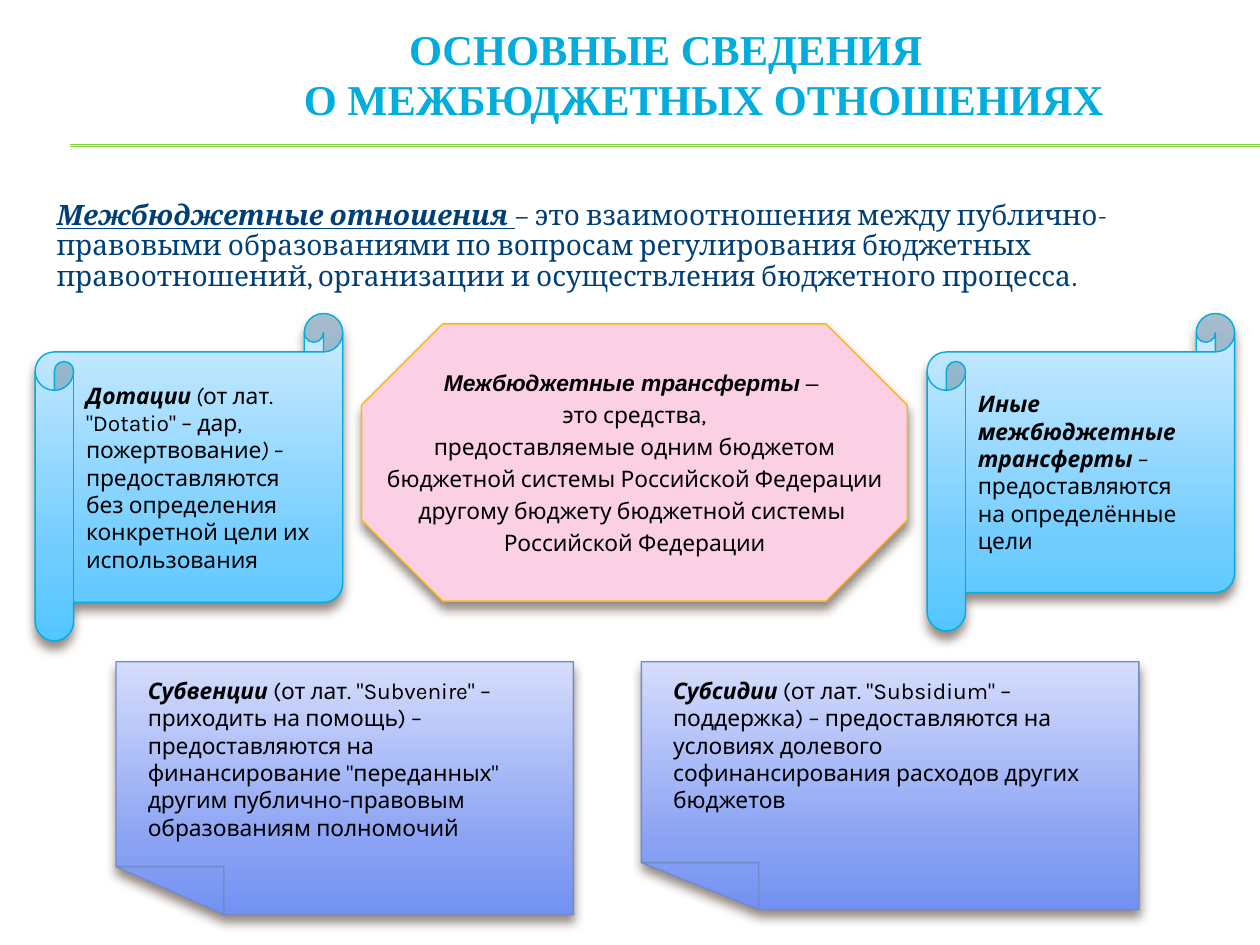
import copy
from dataclasses import dataclass

import pptx
import pptx.dml.color
import pptx.enum.shapes
import pptx.enum.text
import pptx.oxml
import pptx.oxml.ns
import pptx.util

Cm = pptx.util.Cm
Pt = pptx.util.Pt
qn = pptx.oxml.ns.qn
MSO_SHAPE = pptx.enum.shapes.MSO_SHAPE
ANCHOR = pptx.enum.text.MSO_ANCHOR
ALIGN = pptx.enum.text.PP_ALIGN

SKY = ("D1ECFF", "72CDFF", "52C6FF")
VIOLET = ("D5DDFC", "8AA2F3", "7292F3")


@dataclass(frozen=True)
class Piece:
    text: str
    style: str = ""


@dataclass(frozen=True)
class Box:
    left: float
    top: float
    width: float
    height: float

    def lengths(self) -> tuple:
        return Cm(self.left), Cm(self.top), Cm(self.width), Cm(self.height)


@dataclass(frozen=True)
class Card:
    box: Box
    pieces: tuple


def color(value: str) -> pptx.dml.color.RGBColor:
    return pptx.dml.color.RGBColor.from_string(value)


def write(paragraph, pieces: tuple, font: str, size: float, ink: str) -> None:
    paragraph.font.name = font
    paragraph.font.size = Pt(size)
    paragraph.font.color.rgb = color(ink)
    for piece in pieces:
        run = paragraph.add_run()
        run.text = piece.text
        run.font.bold = "b" in piece.style
        run.font.italic = "i" in piece.style
        run.font.underline = "u" in piece.style


def outline(shape, line: str) -> None:
    shape.line.color.rgb = color(line)
    shape.line.width = Pt(0.79)
    shape.shadow.inherit = False
    effects = shape.element.spPr.find(qn("a:effectLst"))
    effects.append(pptx.oxml.parse_xml(
        f'<a:outerShdw {pptx.oxml.ns.nsdecls("a")} blurRad="{Pt(6)}" dist="{Pt(4)}" '
        'dir="5400000" rotWithShape="0"><a:srgbClr val="4E3B30">'
        '<a:alpha val="60000"/></a:srgbClr></a:outerShdw>'))


def shade(shape, tones: tuple) -> None:
    shape.fill.gradient()
    shape.fill.gradient_angle = 270
    stops = shape.element.spPr.find(qn("a:gradFill")).find(qn("a:gsLst"))
    stops.insert(1, copy.deepcopy(stops[0]))
    for stop, tone, position in zip(shape.fill.gradient_stops, tones, (0, 0.72, 1)):
        stop.color.rgb = color(tone)
        stop.position = position


def draw_divider(slide, height: float) -> None:
    divider = slide.shapes.add_connector(
        pptx.enum.shapes.MSO_CONNECTOR.STRAIGHT, Cm(1.42), Cm(height), Cm(25.4), Cm(height))
    divider.line.color.rgb = color("7FD13B")
    divider.line.width = Pt(0.75)
    pptx.oxml.ns.qn
    divider.element.spPr.append(
        pptx.oxml.parse_xml(f'<a:effectLst {pptx.oxml.ns.nsdecls("a")}/>'))


def draw_title(slide) -> None:
    frame = slide.shapes.add_textbox(*Box(0, 0.74, 22.83, 2.79).lengths()).text_frame
    frame.word_wrap = True
    frame.vertical_anchor = ANCHOR.MIDDLE
    frame.margin_top, frame.margin_bottom = Cm(0), Cm(1.3)
    lines = (("ОСНОВНЫЕ СВЕДЕНИЯ", 4.01), ("О МЕЖБЮДЖЕТНЫХ ОТНОШЕНИЯХ", 5.54))
    for index, (text, indent) in enumerate(lines):
        paragraph = frame.add_paragraph() if index else frame.paragraphs[0]
        paragraph.alignment = ALIGN.CENTER
        paragraph.line_spacing = Pt(29)
        write(paragraph, (Piece(text, "b"),), "Times New Roman", 24.3, "00ADDC")
        paragraph._p.get_or_add_pPr().set("marL", str(Cm(indent)))


def draw_definition(slide) -> None:
    frame = slide.shapes.add_textbox(*Box(0.89, 3.94, 23.6, 2.11).lengths()).text_frame
    frame.word_wrap = True
    paragraph = frame.paragraphs[0]
    paragraph.line_spacing = 0.9
    write(paragraph, (
        Piece("Межбюджетные отношения", "biu"),
        Piece(" ", "u"),
        Piece("– это взаимоотношения между публично-правовыми образованиями по вопросам "
              "регулирования бюджетных правоотношений, организации и осуществления "
              "бюджетного процесса."),
    ), "Cambria", 16, "003F75")


def draw_transfers(slide) -> None:
    octagon = slide.shapes.add_shape(MSO_SHAPE.OCTAGON, *Box(7.29, 6.53, 11, 5.59).lengths())
    octagon.adjustments[0] = 0.293
    octagon.fill.solid()
    octagon.fill.fore_color.rgb = color("FBD0E4")
    outline(octagon, "FEB80A")
    frame = octagon.text_frame
    frame.word_wrap = False
    frame.vertical_anchor = ANCHOR.MIDDLE
    lines = (
        (Piece("Межбюджетные трансферты", "bi"), Piece(" – ")),
        (Piece("это средства,"),),
        (Piece("предоставляемые одним бюджетом"),),
        (Piece("бюджетной системы Российской Федерации"),),
        (Piece("другому бюджету бюджетной системы "),),
        (Piece("Российской Федерации"),),
    )
    for index, pieces in enumerate(lines):
        paragraph = frame.add_paragraph() if index else frame.paragraphs[0]
        paragraph.alignment = ALIGN.CENTER
        paragraph.space_before = Pt(2.6)
        write(paragraph, pieces, "Karla" if index else "Arial", 13, "000000")


def draw_scroll(slide, card: Card) -> None:
    scroll = slide.shapes.add_shape(MSO_SHAPE.HORIZONTAL_SCROLL, *card.box.lengths())
    shade(scroll, SKY)
    outline(scroll, "00ADDC")
    frame = scroll.text_frame
    frame.word_wrap = True
    frame.vertical_anchor = ANCHOR.MIDDLE
    frame.paragraphs[0].alignment = ALIGN.LEFT
    write(frame.paragraphs[0], card.pieces, "Karla", 13, "000000")


def draw_note(slide, card: Card) -> None:
    left, top, width, height = card.box.lengths()
    right, bottom = left + width, top + height
    fold_x, fold_y = left + round(width * 0.236), top + round(height * 0.81)
    builder = slide.shapes.build_freeform(left, fold_y)
    builder.add_line_segments((
        (fold_x, fold_y), (fold_x, bottom), (fold_x, fold_y), (left, fold_y),
        (left, top), (right, top), (right, bottom), (fold_x, bottom)), close=True)
    note = builder.convert_to_shape()
    shade(note, VIOLET)
    outline(note, "738AC8")
    frame = note.text_frame
    frame.word_wrap = True
    frame.vertical_anchor = ANCHOR.TOP
    frame.margin_left, frame.margin_right, frame.margin_top = Cm(0.64), Cm(1.02), Cm(0.3)
    frame.paragraphs[0].alignment = ALIGN.LEFT
    write(frame.paragraphs[0], card.pieces, "Karla", 13, "000000")


SCROLLS = (
    Card(Box(0.71, 6.32, 6.2, 6.6), (
        Piece("Дотации", "bi"), Piece(" (", "i"),
        Piece('от лат. "Dotatio" – дар, пожертвование'), Piece(") – ", "i"),
        Piece("предоставляются без определения конкретной цели их использования"))),
    Card(Box(18.69, 6.32, 6.2, 6.4), (
        Piece("Иные межбюджетные трансферты", "bi"),
        Piece(" – предоставляются на определённые цели"))),
)
NOTES = (
    Card(Box(2.34, 13.34, 9.22, 5.1), (
        Piece("Субвенции", "bi"),
        Piece(' (от лат. "Subvenire" – приходить на помощь) – предоставляются на '
              'финансирование "переданных" другим публично-правовым образованиям полномочий'))),
    Card(Box(12.93, 13.34, 10.03, 5), (
        Piece("Субсидии", "bi"),
        Piece(' (от лат. "Subsidium" – поддержка) – предоставляются на условиях '
              "долевого софинансирования расходов других бюджетов"))),
)


def main() -> None:
    deck = pptx.Presentation()
    deck.slide_width, deck.slide_height = Cm(25.4), Cm(19.05)
    slide = deck.slides.add_slide(deck.slide_layouts[6])
    for height in (2.92, 2.95):
        draw_divider(slide, height)
    draw_title(slide)
    draw_transfers(slide)
    draw_definition(slide)
    for card in SCROLLS:
        draw_scroll(slide, card)
    for card in NOTES:
        draw_note(slide, card)
    deck.save("out.pptx")


if __name__ == "__main__":
    main()
